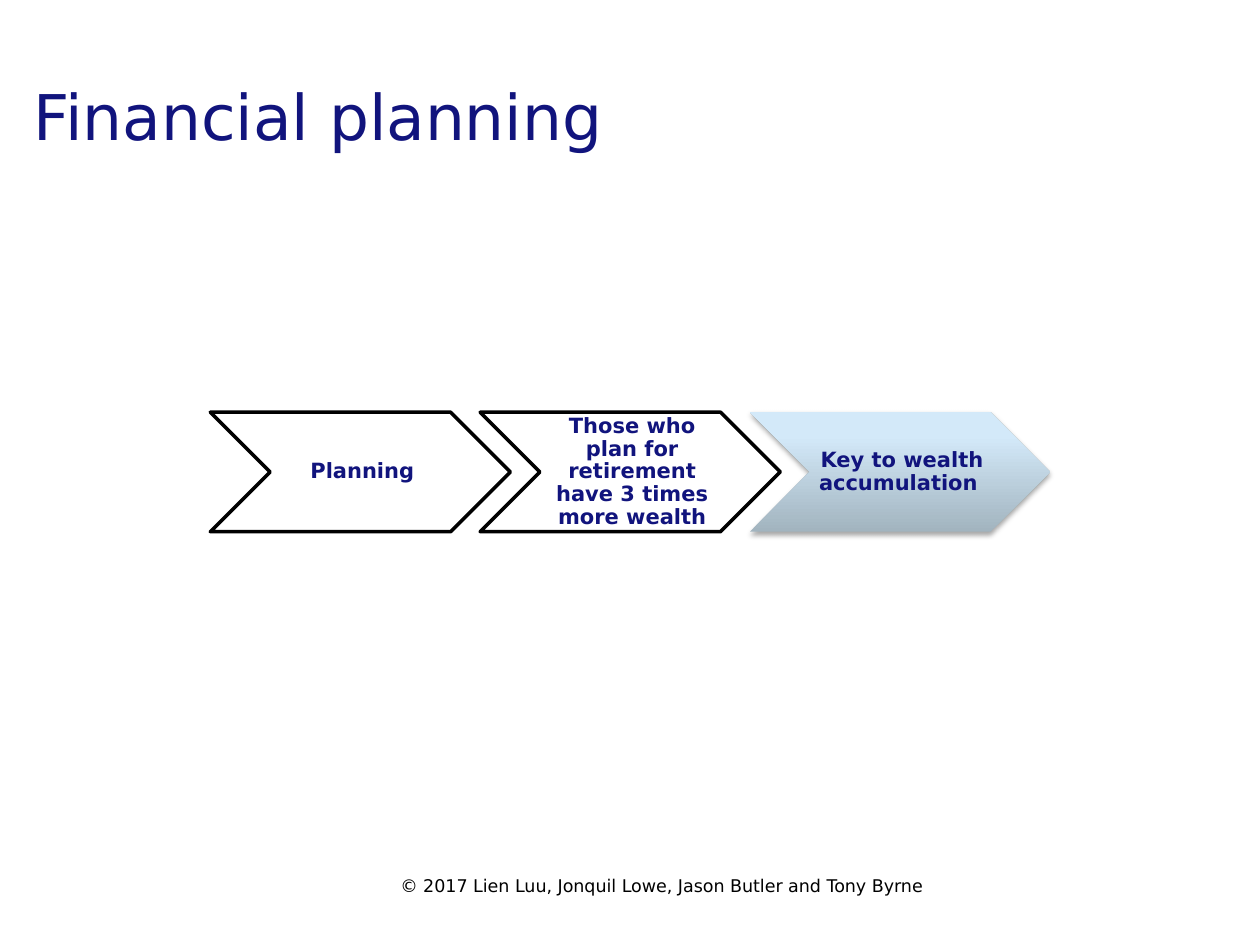
from copy import deepcopy

from lxml.etree import SubElement as Sub
from pptx import Presentation
from pptx.dml.color import RGBColor
from pptx.enum.shapes import MSO_SHAPE as Shape
from pptx.enum.text import MSO_ANCHOR as Anchor, PP_ALIGN as Align
from pptx.oxml.ns import qn
from pptx.util import Cm, Pt

NAVY = RGBColor(0x11, 0x14, 0x7D)
BLACK = RGBColor(0, 0, 0)
WHITE = RGBColor(255, 255, 255)
STEEL = RGBColor(0xA2, 0xB4, 0xBF)
SKY = RGBColor(0xD3, 0xE9, 0xF9)
PALE = RGBColor(0xD3, 0xEB, 0xFA)
FADE = [(0, STEEL), (0.8, SKY), (1, PALE)]

STEPS = [
    "Planning",
    "Those who plan for retirement have 3 times more wealth",
    "Key to wealth accumulation ",
]
LEFT, TOP, WIDE, HIGH, PITCH = 4.24, 8.31, 6.05, 2.41, 5.44


class Deck:
    font = "DejaVu Sans"

    def __init__(self, wide, high):
        self.prs = Presentation()
        self.prs.slide_width, self.prs.slide_height = Cm(wide), Cm(high)
        self.slide = self.prs.slides.add_slide(self.prs.slide_layouts[6])

    def text(self, words, box, size, color, bold=False, align=Align.LEFT,
             pad=(0.25, 0.13, 0.25, 0.13), space=1):
        frame = self.slide.shapes.add_textbox(*map(Cm, box)).text_frame
        frame.word_wrap = True
        frame.vertical_anchor = Anchor.MIDDLE
        (frame.margin_left, frame.margin_top,
         frame.margin_right, frame.margin_bottom) = map(Cm, pad)
        para = frame.paragraphs[0]
        para.alignment, para.line_spacing = align, space
        run = para.add_run()
        run.text = words
        font = run.font
        font.name, font.size, font.bold = self.font, Pt(size), bold
        font.color.rgb = color

    def arrow(self, box, last):
        item = self.slide.shapes.add_shape(Shape.CHEVRON, *map(Cm, box))
        item.shadow.inherit = False
        if last:
            item.line.fill.background()
            self.fade(item)
            self.shade(item)
        else:
            item.fill.solid()
            item.fill.fore_color.rgb = WHITE
            item.line.color.rgb = BLACK
            item.line.width = Pt(2)

    def fade(self, item):
        """Fill with the three-stop gradient, running upwards."""
        item.fill.gradient()
        item.fill.gradient_angle = 90
        stop = item._element.spPr.find(".//" + qn("a:gs"))
        stop.addnext(deepcopy(stop))
        for stop, (place, color) in zip(item.fill.gradient_stops, FADE):
            stop.position, stop.color.rgb = place, color

    def shade(self, item):
        """Add a soft shadow below."""
        effect = item._element.spPr.find(qn("a:effectLst"))
        outer = Sub(effect, qn("a:outerShdw"), blurRad=str(Pt(3.1)),
                    dist=str(Pt(1.8)), dir="5400000", rotWithShape="0")
        color = Sub(outer, qn("a:srgbClr"), val=str(BLACK))
        Sub(color, qn("a:alpha"), val="35000")


def main():
    deck = Deck(25.4, 19.05)
    deck.text("Financial planning", (0.43, 0.84, 23.93, 2.97), 36, NAVY)
    for i, words in enumerate(STEPS):
        x = LEFT + i * PITCH
        deck.arrow((x, TOP, WIDE, HIGH), i == len(STEPS) - 1)
        deck.text(words, (x + HIGH / 2, TOP, WIDE - HIGH, HIGH), 12, NAVY,
                  True, Align.CENTER, (0.12, 0.04, 0.04, 0.04), 0.9)
    deck.text("© 2017 Lien Luu, Jonquil Lowe, Jason Butler and Tony Byrne",
              (7.82, 17.35, 15.14, 1.02), 10, BLACK)
    deck.prs.save("out.pptx")


if __name__ == "__main__":
    main()
